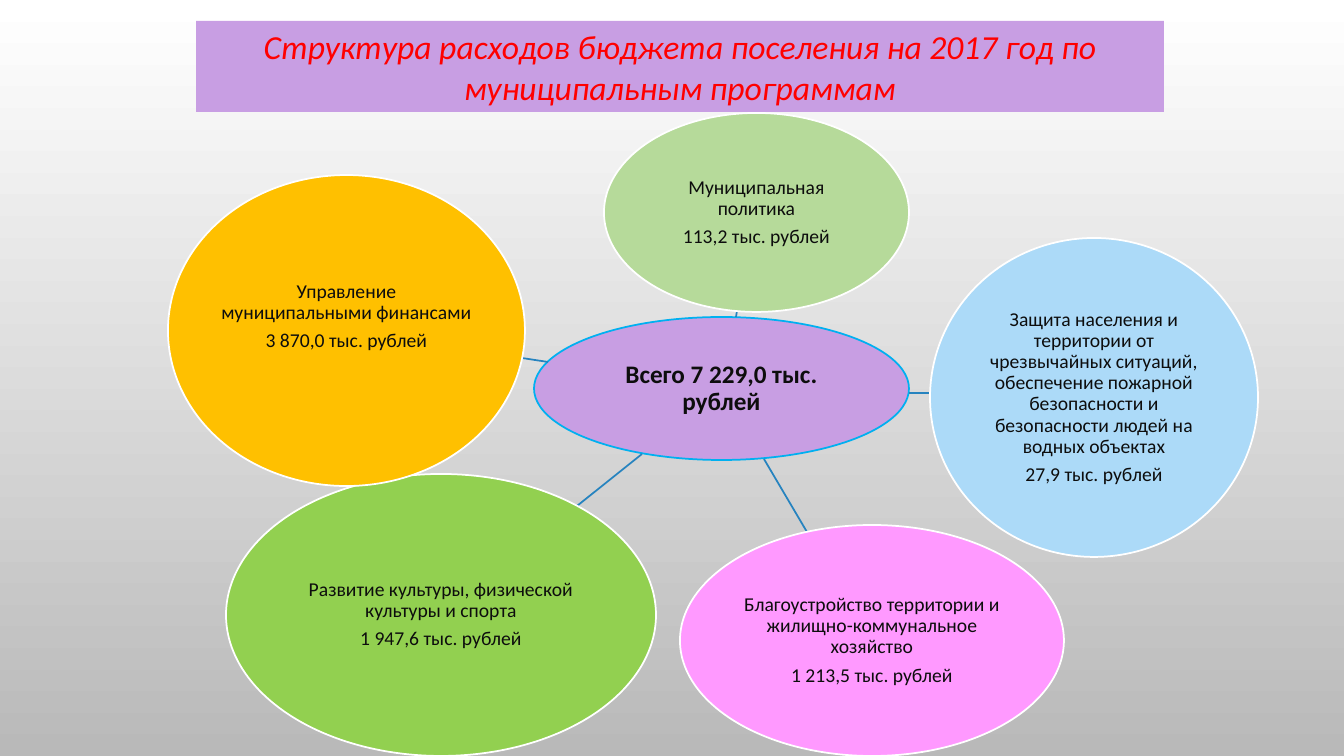
from lxml import etree
from pptx import Presentation
from pptx.dml.color import RGBColor
from pptx.enum.shapes import MSO_CONNECTOR, MSO_SHAPE
from pptx.enum.text import MSO_ANCHOR, MSO_AUTO_SIZE, PP_ALIGN
from pptx.oxml.ns import qn
from pptx.util import Pt

ELLIPSE = MSO_SHAPE.OVAL
STRAIGHT = MSO_CONNECTOR.STRAIGHT
MIDDLE = MSO_ANCHOR.MIDDLE
CENTER = PP_ALIGN.CENTER
NO_AUTOFIT = MSO_AUTO_SIZE.NONE

EMU_PER_PX = 914400 / 100.8
FONT = "Calibri"
TEXT_COLOR = "0D0D0D"
LILAC = "C89EE3"
LINE_WIDTH = Pt(1.25)

TITLE = "Структура расходов бюджета поселения на 2017 год по муниципальным программам"
TOTAL = "Всего 7 229,0 тыс. рублей"
TOTAL_BOX = (534, 317, 375, 143)

# Program, amount, ellipse box, fill, spoke ends, bottom inset
PROGRAMS = [
    ("Муниципальная политика", "113,2 тыс. рублей",
     (604, 113, 305, 199), "B6DA9A", (736, 317, 737, 311), 1),
    ("Развитие культуры, физической культуры и спорта", "1 947,6 тыс. рублей",
     (226, 474, 430, 282), "92D050", (642, 454, 577, 506), 1),
    ("Управление муниципальными финансами", "3 870,0 тыс. рублей",
     (168, 175, 357, 311), "FFC000", (548, 362, 522, 358), 29),
    ("Защита населения и территории от чрезвычайных ситуаций, обеспечение "
     "пожарной безопасности и безопасности людей на водных объектах",
     "27,9 тыс. рублей",
     (930, 238, 328, 319), "ACDAF8", (909, 393, 930, 393), 1),
    ("Благоустройство территории и жилищно-коммунальное хозяйство",
     "1 213,5 тыс. рублей",
     (680, 525, 384, 231), "FF99FF", (764, 459, 807, 532), 1),
]


def px(length):
    return round(length * EMU_PER_PX)


def rgb(color):
    return RGBColor.from_string(color)


def apply(target, values):
    for name, value in values.items():
        setattr(target, name, value)


def fill_solid(shape, color):
    shape.fill.solid()
    shape.fill.fore_color.rgb = rgb(color)


def write_paragraphs(frame, texts, color, font_format, paragraph_format):
    for index, text in enumerate(texts):
        paragraph = frame.paragraphs[0] if index == 0 else frame.add_paragraph()
        apply(paragraph, {"alignment": CENTER, **paragraph_format})
        run = paragraph.add_run()
        run.text = text
        apply(run.font, {"name": FONT, **font_format})
        run.font.color.rgb = rgb(color)


def paint_background(slide):
    fill = slide.background.fill
    fill.gradient()
    fill.gradient_angle = 270
    for stop, color in zip(fill.gradient_stops, ("FFFFFF", "B9B9B9")):
        stop.color.rgb = rgb(color)


def add_title(slide):
    title = slide.shapes.title
    apply(title, {"left": px(196), "top": px(21), "width": px(968), "height": px(91)})
    fill_solid(title, LILAC)
    apply(title.text_frame, {"word_wrap": True, "auto_size": NO_AUTOFIT,
                             "vertical_anchor": MIDDLE})
    write_paragraphs(title.text_frame, [TITLE], "FF0000",
                     {"size": Pt(24), "italic": True}, {})


def add_ellipse(slide, box, fill, outline, texts, font_format, bottom_inset=1):
    ellipse = slide.shapes.add_shape(ELLIPSE, *map(px, box))
    ellipse.shadow.inherit = False
    fill_solid(ellipse, fill)
    ellipse.line.color.rgb = rgb(outline)
    ellipse.line.width = LINE_WIDTH
    apply(ellipse.text_frame, {
        "word_wrap": True, "auto_size": NO_AUTOFIT, "vertical_anchor": MIDDLE,
        "margin_left": px(1), "margin_right": px(1),
        "margin_top": px(1), "margin_bottom": px(bottom_inset)})
    write_paragraphs(ellipse.text_frame, texts, TEXT_COLOR, font_format,
                     {"line_spacing": 0.9, "space_after": Pt(5)})


def add_spoke(slide, ends):
    spoke = slide.shapes.add_connector(STRAIGHT, *map(px, ends))
    spoke.line.color.rgb = rgb("2683BF")
    spoke.line.width = LINE_WIDTH
    etree.SubElement(spoke._element.spPr, qn("a:effectLst"))


def main():
    deck = Presentation()
    apply(deck, {"slide_width": px(1344), "slide_height": px(756)})
    slide = deck.slides.add_slide(deck.slide_layouts[5])
    paint_background(slide)

    # Total in the hub
    add_ellipse(slide, TOTAL_BOX, LILAC, "00B0F0", [TOTAL],
                {"size": Pt(18), "bold": True})

    # Programs around the hub
    for program, amount, box, fill, spoke_ends, bottom_inset in PROGRAMS:
        add_spoke(slide, spoke_ends)
        add_ellipse(slide, box, fill, "FFFFFF", [program, amount],
                    {"size": Pt(14)}, bottom_inset)

    add_title(slide)
    deck.save("out.pptx")


if __name__ == "__main__":
    main()
